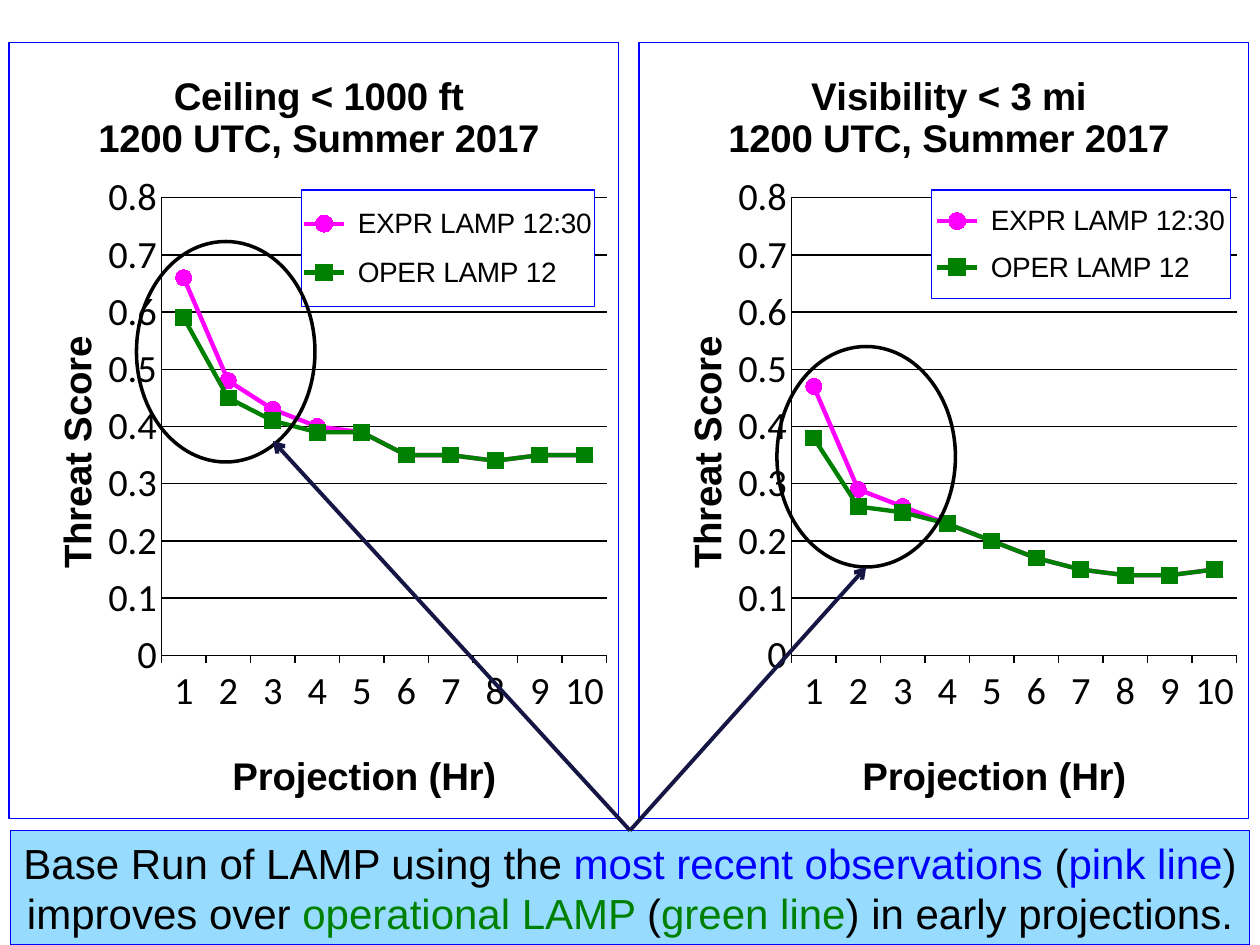
from typing import NamedTuple

from lxml.etree import SubElement
from pptx import Presentation
from pptx.chart.data import CategoryChartData
from pptx.dml.color import RGBColor
from pptx.enum.chart import XL_CHART_TYPE, XL_LEGEND_POSITION, XL_MARKER_STYLE, XL_TICK_MARK
from pptx.enum.shapes import MSO_CONNECTOR, MSO_SHAPE
from pptx.enum.text import PP_ALIGN
from pptx.oxml import parse_xml
from pptx.oxml.ns import nsdecls, qn
from pptx.util import Inches, Pt

BLACK = RGBColor(0x00, 0x00, 0x00)
BLUE = RGBColor(0x00, 0x00, 0xFF)
GREEN = RGBColor(0x00, 0x80, 0x00)
PINK = RGBColor(0xFF, 0x00, 0xFF)
NAVY = RGBColor(0x16, 0x16, 0x45)
SKY = RGBColor(0x97, 0xDC, 0xFF)

# The slide is a grid of 120 columns by 90 rows
CELL = Inches(1 / 12)
COLUMNS, ROWS = 120, 90


class Box(NamedTuple):
    left: float
    top: float
    width: float
    height: float

    def lengths(self) -> list[int]:
        return [round(value * CELL) for value in self]


class Panel(NamedTuple):
    heading: str
    experimental: list[float]
    operational: list[float]
    legend: Box  # shares of the chart's size
    ring: Box
    arrow_tip: tuple[float, float]


PANELS = [
    Panel("Ceiling < 1000 ft",
          [0.66, 0.48, 0.43, 0.4, 0.39, 0.35, 0.35, 0.34, 0.35, 0.35],
          [0.59, 0.45, 0.41, 0.39, 0.39, 0.35, 0.35, 0.34, 0.35, 0.35],
          Box(0.48, 0.19, 0.48, 0.15), Box(13, 23, 17, 21), (26, 42)),
    Panel("Visibility < 3 mi",
          [0.47, 0.29, 0.26, 0.23, 0.2, 0.17, 0.15, 0.14, 0.14, 0.15],
          [0.38, 0.26, 0.25, 0.23, 0.2, 0.17, 0.15, 0.14, 0.14, 0.15],
          Box(0.48, 0.19, 0.49, 0.14), Box(74, 33, 17, 21), (82.5, 54)),
]
SERIES_STYLES = [(PINK, XL_MARKER_STYLE.CIRCLE), (GREEN, XL_MARKER_STYLE.SQUARE)]
FIRST_CHART = Box(0.8, 4, 58.2, 74)
PLOT = Box(0.25, 0.2, 0.73, 0.59)
MESSAGE = [
    ("Base Run of LAMP using the ", BLACK), ("most recent observations", BLUE),
    (" (", BLACK), ("pink line", BLUE), (") improves over ", BLACK),
    ("operational LAMP ", GREEN), ("(", BLACK), ("green line", GREEN),
    (") in early projections.", BLACK),
]


def style_font(font, size: float, name: str = "Arial", bold: bool = False,
               color: RGBColor = BLACK) -> None:
    font.size, font.name, font.bold = Pt(size), name, bold
    font.color.rgb = color


def style_line(line, color: RGBColor, width: float) -> None:
    line.color.rgb = color
    line.width = Pt(width)


def place(element, after: str | None, shares: tuple, inner: bool = False) -> None:
    """Give a chart part a manual layout: x, y and optionally w, h."""
    for old in element.findall(qn("c:layout")):
        element.remove(old)
    layout = parse_xml(f"<c:layout {nsdecls('c')}><c:manualLayout/></c:layout>")
    manual = layout[0]
    settings = [("layoutTarget", "inner")] if inner else []
    settings += [("xMode", "edge"), ("yMode", "edge"), *zip("xywh", shares)]
    for tag, value in settings:
        SubElement(manual, qn(f"c:{tag}")).set("val", str(value))
    if after:
        element.find(qn(after)).addnext(layout)
    else:
        element.insert(0, layout)


def frame(anchor) -> None:
    """Add a white fill and thin blue border after a chart element."""
    anchor.addnext(parse_xml(
        f'<c:spPr {nsdecls("c", "a")}><a:solidFill><a:srgbClr val="FFFFFF"/></a:solidFill>'
        f'<a:ln w="{Pt(0.75)}"><a:solidFill><a:srgbClr val="{BLUE}"/></a:solidFill></a:ln></c:spPr>'))


def write_title(title, lines: list[str], position: tuple[float, float]) -> None:
    text_frame = title.text_frame
    for index, text in enumerate(lines):
        paragraph = text_frame.add_paragraph() if index else text_frame.paragraphs[0]
        run = paragraph.add_run()
        run.text = text
        style_font(run.font, 22, bold=True)
    place(title._element, "c:tx", position)


def add_panel_chart(slide, panel: Panel, box: Box) -> None:
    data = CategoryChartData()
    data.categories = [str(hour) for hour in range(1, 11)]
    data.add_series(" EXPR LAMP 12:30", panel.experimental)
    data.add_series(" OPER LAMP 12", panel.operational)
    chart = slide.shapes.add_chart(XL_CHART_TYPE.LINE_MARKERS, *box.lengths(), data).chart
    style_font(chart.font, 10, "Calibri")
    chart.has_title = True
    write_title(chart.chart_title, [panel.heading, "1200 UTC, Summer 2017"], (0.14, 0.035))

    # Axes
    for axis, title, position, tick in [
        (chart.category_axis, "Projection (Hr)", (0.355, 0.905), XL_TICK_MARK.OUTSIDE),
        (chart.value_axis, "Threat Score", (0.06, 0.37), XL_TICK_MARK.NONE),
    ]:
        axis.has_title = True
        write_title(axis.axis_title, [title], position)
        axis.major_tick_mark, axis.minor_tick_mark = tick, XL_TICK_MARK.NONE
        style_font(axis.tick_labels.font, 22, "Calibri")
        style_line(axis.format.line, BLACK, 0.75)
    value_axis = chart.value_axis
    value_title = value_axis.axis_title.text_frame._txBody.bodyPr
    value_title.set("rot", "-5400000")
    value_title.set("vert", "horz")
    value_axis.minimum_scale, value_axis.maximum_scale = 0, 0.8
    value_axis.major_unit = 0.1
    value_axis.tick_labels.number_format = "General"
    value_axis.tick_labels.number_format_is_linked = False
    style_line(value_axis.major_gridlines.format.line, BLACK, 0.75)

    # Series
    plot = chart.plots[0]
    plot.vary_by_categories = False
    for series, (color, marker_style) in zip(plot.series, SERIES_STYLES):
        series.smooth = False
        style_line(series.format.line, color, 2.5)
        marker = series.marker
        marker.style, marker.size = marker_style, 9
        marker.format.fill.solid()
        marker.format.fill.fore_color.rgb = color
        marker.format.line.color.rgb = color

    # Legend, plot area and border
    chart.has_legend = True
    legend = chart.legend
    legend.position = XL_LEGEND_POSITION.RIGHT
    legend.include_in_layout = True
    style_font(legend.font, 16)
    place(legend._element, "c:legendPos", panel.legend)
    frame(legend._element.find(qn("c:overlay")))
    chart_element = chart._chartSpace.find(qn("c:chart"))
    place(chart_element.find(qn("c:plotArea")), None, PLOT, inner=True)
    frame(chart_element)


def add_message(slide):
    shape = slide.shapes.add_shape(MSO_SHAPE.RECTANGLE, *Box(1, 79.1, 118, 10.9).lengths())
    shape.shadow.inherit = False
    shape.fill.solid()
    shape.fill.fore_color.rgb = SKY
    style_line(shape.line, BLUE, 0.75)
    text_frame = shape.text_frame
    text_frame.word_wrap = True
    text_frame.margin_left = text_frame.margin_right = Inches(0.08)
    paragraph = text_frame.paragraphs[0]
    paragraph.alignment = PP_ALIGN.CENTER
    for text, color in MESSAGE:
        run = paragraph.add_run()
        run.text = text
        style_font(run.font, 24, color=color)
    return shape


def add_ring(slide, box: Box) -> None:
    ring = slide.shapes.add_shape(MSO_SHAPE.OVAL, *box.lengths())
    ring.shadow.inherit = False
    ring.fill.background()
    style_line(ring.line, BLACK, 2)


def add_arrow(slide, source, tip: tuple[float, float]) -> None:
    end = [round(value * CELL) for value in tip]
    arrow = slide.shapes.add_connector(MSO_CONNECTOR.STRAIGHT, 0, 0, *end)
    arrow.begin_connect(source, 0)
    style_line(arrow.line, NAVY, 2.25)
    SubElement(arrow.line._get_or_add_ln(), qn("a:tailEnd")).set("type", "arrow")
    SubElement(arrow._element.spPr, qn("a:effectLst"))


def main() -> None:
    presentation = Presentation()
    presentation.slide_width, presentation.slide_height = COLUMNS * CELL, ROWS * CELL
    slide = presentation.slides.add_slide(presentation.slide_layouts[6])
    for index, panel in enumerate(PANELS):
        left = FIRST_CHART.left + index * COLUMNS / 2
        add_panel_chart(slide, panel, FIRST_CHART._replace(left=left))
    message = add_message(slide)
    for panel in PANELS:
        add_ring(slide, panel.ring)
        add_arrow(slide, message, panel.arrow_tip)
    presentation.save("out.pptx")


if __name__ == "__main__":
    main()
